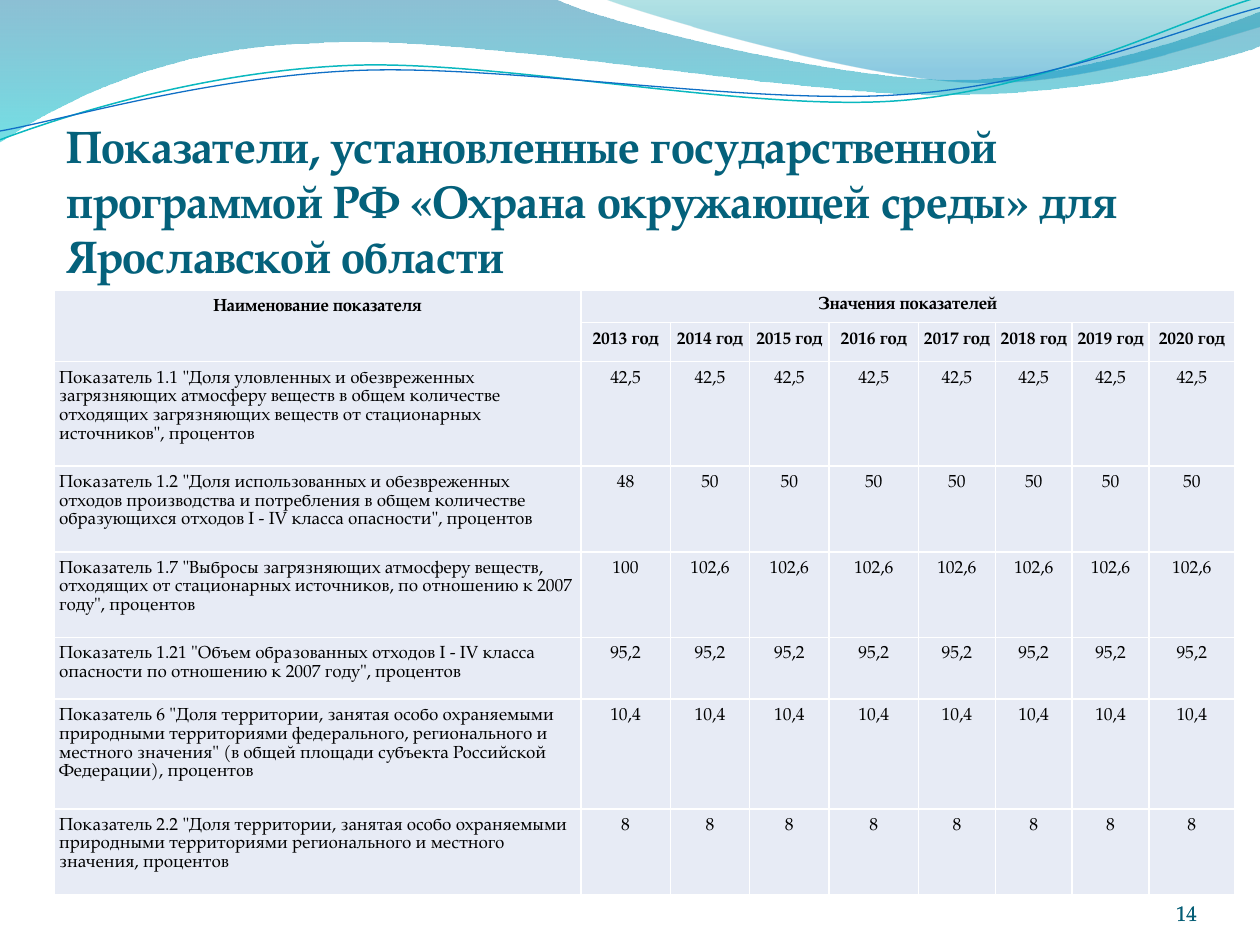
from lxml import etree
from pptx import Presentation
from pptx.dml.color import RGBColor
from pptx.enum.text import MSO_ANCHOR, PP_ALIGN
from pptx.oxml.ns import qn
from pptx.util import Inches, Pt

CENTER, LEFT, RIGHT = PP_ALIGN.CENTER, PP_ALIGN.LEFT, PP_ALIGN.RIGHT
BOTTOM, TOP = MSO_ANCHOR.BOTTOM, MSO_ANCHOR.TOP
FONT = "TeX Gyre Pagella"
COLORS = {"title": "04617B", "number": "045C75", "number_front": "045D75",
          "text": "000000", "cell": "E7EBF5", "border": "FFFFFF"}


def add_curve(shapes, start, segments, close):
    """Add a freeform; a segment of one point is a line, of three a Bezier curve."""
    points = [(Inches(x), Inches(y)) for segment in segments for x, y in segment]
    builder = shapes.build_freeform(Inches(start[0]), Inches(start[1]))
    builder.add_line_segments(points, close=close)
    shape = builder.convert_to_shape()
    shape.shadow.inherit = False
    lines = list(shape.element.spPr.iter(qn("a:lnTo")))
    for segment in segments:
        group, lines = lines[:len(segment)], lines[len(segment):]
        if len(group) == 3:
            curve = etree.Element(qn("a:cubicBezTo"))
            group[0].addprevious(curve)
            for line in group:
                curve.append(line[0])
                line.getparent().remove(line)
    return shape


def format_text(paragraph, size, color, bold=False, alignment=LEFT):
    paragraph.alignment = alignment
    for run in paragraph.runs:
        run.font.name = FONT
        run.font.size = Pt(size)
        run.font.bold = bold
        run.font.color.rgb = RGBColor.from_string(COLORS[color])


presentation = Presentation()
presentation.slide_width = Inches(10)
presentation.slide_height = Inches(7.5)
slide = presentation.slides.add_slide(presentation.slide_layouts[5])
shapes = slide.shapes

# Waves: start, segments, gradient stops (position, colour, opacity in percent)
waves = [
    ((0, 0),
     [[(4.4, -0.01)],
      [(4.76, 0.17), (6.64, 0.63), (7.58, 0.63)],
      [(8.53, 0.63), (9.58, 0.26), (10, 0.09)],
      [(10.01, 0.36)],
      [(9.83, 0.44), (8.7, 0.76), (7.46, 0.75)],
      [(6.22, 0.75), (3.82, 0.28), (2.57, 0.34)],
      [(1.29, 0.36), (0.46, 0.83), (-0.01, 1.13)]],
     [(0, "0074A1", 45), (1, "00C6CF", 55)]),
    ((4.79, -0.01),
     [[(5.09, 0.11), (6.82, 0.62), (7.69, 0.65)],
      [(8.56, 0.69), (9.61, 0.32), (10, 0.21)],
      [(10, 0)]],
     [(0, "00A1A9", 30), (0.8, "008BBF", 45)]),
]
for start, segments, stops in waves:
    wave = add_curve(shapes, start, segments, close=True)
    wave.line.fill.background()
    wave.fill.gradient()
    wave.fill.gradient_angle = 270
    for stop, (position, color, opacity) in zip(wave.fill.gradient_stops, stops):
        stop.position = position
        stop.color.rgb = RGBColor.from_string(color)
    for element, (_, _, opacity) in zip(wave.element.spPr.iter(qn("a:srgbClr")), stops):
        etree.SubElement(element, qn("a:alpha"), val=str(opacity * 1000))

# Thin lines along the waves: start, segments, colour, width
ripples = [
    ((0, 1.11),
     [[(0.48, 0.93), (1.58, 0.57), (2.77, 0.52)],
      [(3.95, 0.47), (5.93, 0.89), (7.13, 0.8)],
      [(8.33, 0.71), (9.38, 0.15), (9.98, -0.02)]], "0AB8BF", 0.85),
    ((0, 1.04),
     [[(0.47, 0.96), (1.64, 0.61), (2.83, 0.56)],
      [(4.03, 0.51), (5.97, 0.84), (7.17, 0.75)],
      [(8.36, 0.67), (9.41, 0.21), (10, 0.06)]], "0F6FC6", 0.75),
]
for start, segments, color, width in ripples:
    ripple = add_curve(shapes, start, segments, close=False)
    ripple.fill.background()
    ripple.line.color.rgb = RGBColor.from_string(color)
    ripple.line.width = Pt(width)

# Slide number, set twice so that it looks heavier
for color in ("number", "number_front"):
    number = shapes.add_textbox(Inches(8.67), Inches(6.95), Inches(0.83), Inches(0.4))
    frame = number.text_frame
    frame.word_wrap = True
    frame.vertical_anchor = BOTTOM
    frame.margin_left = frame.margin_right = frame.margin_top = frame.margin_bottom = 0
    frame.text = "14"
    format_text(frame.paragraphs[0], 12, color, alignment=RIGHT)

# Title, in front of the waves
title = shapes.title
title.element.getparent().append(title.element)
title.left, title.top = Inches(0.43), Inches(0.89)
title.width, title.height = Inches(9.19), Inches(1.41)
title.text_frame.vertical_anchor = TOP
title.text_frame.text = ("Показатели, установленные государственной программой РФ "
                         "«Охрана окружающей среды» для Ярославской области")
format_text(title.text_frame.paragraphs[0], 26, "title", bold=True)

# Indicator table: name, value for 2013, value for each later year
indicators = [
    ('Показатель 1.1 "Доля уловленных и обезвреженных загрязняющих атмосферу веществ в общем '
     'количестве отходящих загрязняющих веществ от стационарных источников", процентов',
     "42,5", "42,5"),
    ('Показатель 1.2 "Доля использованных и обезвреженных отходов производства и потребления '
     'в общем количестве образующихся отходов I - IV класса опасности", процентов',
     "48", "50"),
    ('Показатель 1.7 "Выбросы загрязняющих атмосферу веществ, отходящих от стационарных '
     'источников, по отношению к 2007 году", процентов', "100", "102,6"),
    ('Показатель 1.21 "Объем образованных отходов I - IV класса опасности по отношению '
     'к 2007 году", процентов', "95,2", "95,2"),
    ('Показатель 6 "Доля территории, занятая особо охраняемыми природными территориями '
     'федерального, регионального и местного значения" (в общей площади субъекта '
     'Российской Федерации), процентов', "10,4", "10,4"),
    ('Показатель 2.2 "Доля территории, занятая особо охраняемыми природными территориями '
     'регионального и местного значения, процентов', "8", "8"),
]
years = range(2013, 2021)
rows = [["Наименование показателя", "Значения показателей"] + [""] * 7,
        [""] + [f"{year} год" for year in years]]
rows += [[name, first] + [later] * 7 for name, first, later in indicators]
column_widths = [4.18, 0.71, 0.63, 0.63, 0.71, 0.61, 0.61, 0.61, 0.68]
row_heights = [0.26, 0.31, 0.83, 0.68, 0.68, 0.49, 0.87, 0.68]

table = shapes.add_table(len(rows), len(column_widths), Inches(0.43), Inches(2.3),
                         Inches(sum(column_widths)), Inches(sum(row_heights))).table
table.first_row = table.horz_banding = False
for column, width in zip(table.columns, column_widths):
    column.width = Inches(width)
for row, height in zip(table.rows, row_heights):
    row.height = Inches(height)
table.cell(0, 0).merge(table.cell(1, 0))
table.cell(0, 1).merge(table.cell(0, 8))

for row_index, texts in enumerate(rows):
    for column_index, text in enumerate(texts):
        cell = table.cell(row_index, column_index)
        is_group_header = row_index == 0 and column_index > 0
        cell.margin_left = cell.margin_right = Inches(0 if is_group_header else 0.04)
        cell.margin_top = cell.margin_bottom = Inches(0.04 if is_group_header else 0.06)
        properties = cell._tc.get_or_add_tcPr()
        for side in ("lnL", "lnR", "lnT", "lnB"):
            border = etree.SubElement(properties, qn(f"a:{side}"), w=str(Pt(1)))
            fill = etree.SubElement(border, qn("a:solidFill"))
            etree.SubElement(fill, qn("a:srgbClr"), val=COLORS["border"])
        cell.fill.solid()
        cell.fill.fore_color.rgb = RGBColor.from_string(COLORS["cell"])
        if text:
            cell.text_frame.text = text
            paragraph = cell.text_frame.paragraphs[0]
            paragraph.line_spacing = Pt(10.7)
            is_name = row_index > 1 and column_index == 0
            format_text(paragraph, 10, "text", bold=row_index < 2,
                        alignment=LEFT if is_name else CENTER)

presentation.save("out.pptx")
